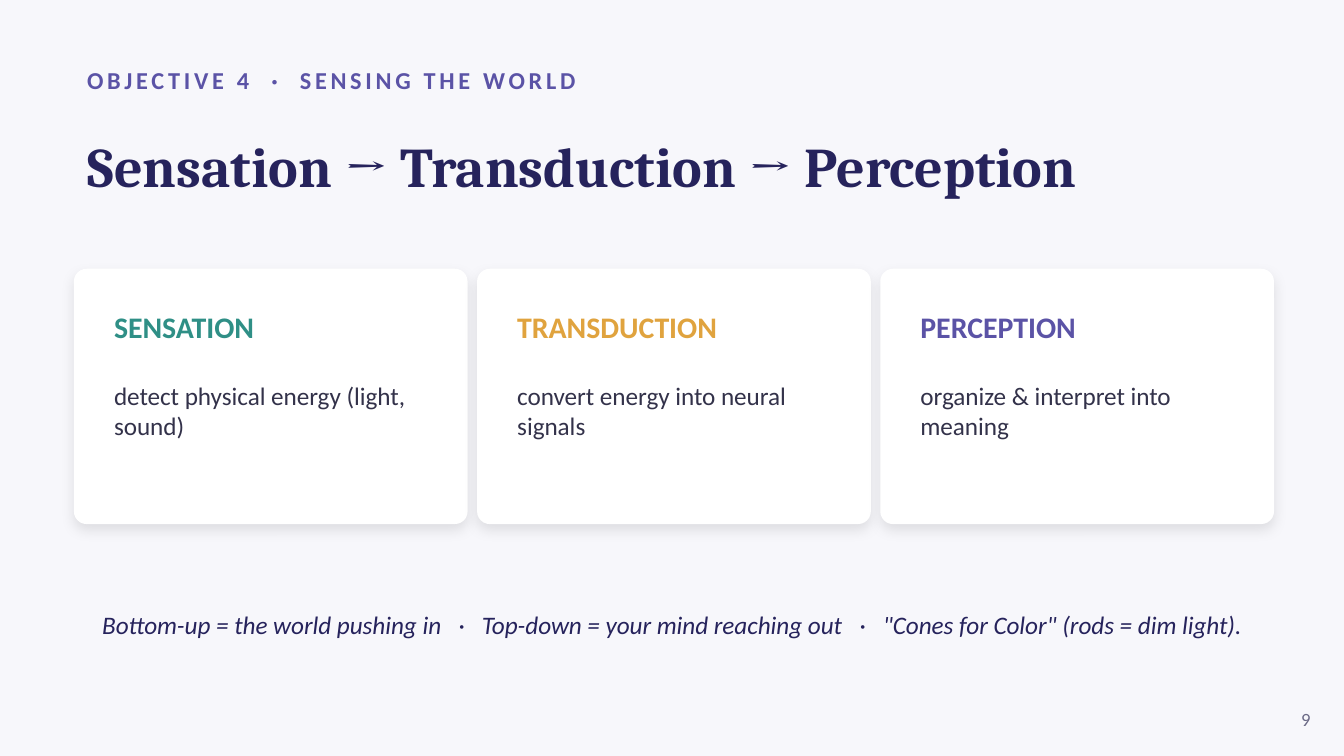
from lxml import etree
from pptx import Presentation
from pptx.dml.color import RGBColor
from pptx.enum import shapes, text
from pptx.oxml.ns import qn
from pptx.util import Inches, Pt

BACKGROUND = RGBColor(0xF7, 0xF7, 0xFB)
WHITE = RGBColor(0xFF, 0xFF, 0xFF)
NAVY = RGBColor(0x26, 0x23, 0x5C)
PURPLE = RGBColor(0x5B, 0x53, 0xA6)
TEAL = RGBColor(0x2F, 0x8F, 0x86)
AMBER = RGBColor(0xE0, 0xA3, 0x3E)
INK = RGBColor(0x33, 0x32, 0x4A)
GREY = RGBColor(0x6B, 0x6A, 0x86)
LEFT, MIDDLE = text.PP_ALIGN.LEFT, text.MSO_ANCHOR.MIDDLE


def place(shape, left, top, width, height, anchor=MIDDLE):
    """Position a text shape and return its text frame."""
    shape.left, shape.top = Inches(left), Inches(top)
    shape.width, shape.height = Inches(width), Inches(height)
    frame = shape.text_frame
    frame.word_wrap = True
    frame.auto_size = text.MSO_AUTO_SIZE.NONE
    frame.vertical_anchor = anchor
    return frame


def write(paragraph, words, color, align=LEFT, tracking=0, dot_tracking=0, **style):
    """Write words, with extra room around each separating dot."""
    paragraph.alignment = align
    for index, part in enumerate(words.split(" ·")):
        pieces = [(part, tracking)]
        if index:
            pieces.insert(0, (" ·", dot_tracking))
        for piece, spacing in pieces:
            run = paragraph.add_run()
            run.text = piece
            for name, value in ({"name": "Calibri"} | style).items():
                setattr(run.font, name, value)
            run.font.color.rgb = color
            if spacing:
                run.font._element.set("spc", str(int(spacing * 100)))


# Widescreen 16:9 slide
prs = Presentation()
prs.slide_width = Inches(10)
prs.slide_height = Inches(10) * 9 // 16
slide = prs.slides.add_slide(prs.slide_layouts[5])
slide.background.fill.solid()
slide.background.fill.fore_color.rgb = BACKGROUND

# Objective line and title
objective = place(slide.shapes.add_textbox(0, 0, 0, 0), 0.55, 0.42, 9, 0.35)
write(objective.paragraphs[0], "OBJECTIVE 4 · SENSING THE WORLD", PURPLE,
      tracking=2, dot_tracking=6.9, size=Pt(13), bold=True)
title = place(slide.shapes.title, 0.55, 0.78, 8.9, 0.9)
write(title.paragraphs[0], "Sensation → Transduction → Perception", NAVY,
      name="Cambria", size=Pt(30), bold=True)

# Three stages, each a card with its text
stages = [
    ("SENSATION", "detect physical energy (light, sound)", TEAL),
    ("TRANSDUCTION", "convert energy into neural signals", AMBER),
    ("PERCEPTION", "organize & interpret into meaning", PURPLE),
]
PITCH = 3
for column, (stage, meaning, accent) in enumerate(stages):
    left = 0.55 + column * PITCH
    card = slide.shapes.add_shape(shapes.MSO_SHAPE.ROUNDED_RECTANGLE,
                                  Inches(left), Inches(2), Inches(2.93), Inches(1.9))
    card.adjustments[0] = 0.05
    card.fill.solid()
    card.fill.fore_color.rgb = WHITE
    card.line.fill.background()

    # Soft shadow below the card
    card.shadow.inherit = False
    effects = card._element.spPr.find(qn("a:effectLst"))
    shadow = etree.SubElement(effects, qn("a:outerShdw"), blurRad=str(Pt(7)),
                              dist=str(Pt(3)), dir="5400000", rotWithShape="0")
    black = etree.SubElement(shadow, qn("a:srgbClr"), val="000000")
    etree.SubElement(black, qn("a:alpha"), val="10000")

    caption = place(slide.shapes.add_textbox(0, 0, 0, 0), left + 0.2, 2.25, 2.55, 1.5,
                    text.MSO_ANCHOR.TOP)
    heading = caption.paragraphs[0]
    heading.space_after = Pt(19)
    write(heading, stage, accent, size=Pt(16), bold=True)
    write(caption.add_paragraph(), meaning, INK, size=Pt(13.5))

# Memory hook and page number
hook = place(slide.shapes.add_textbox(0, 0, 0, 0), 0.55, 4.4, 8.9, 0.5)
write(hook.paragraphs[0],
      'Bottom-up = the world pushing in · Top-down = your mind reaching out'
      ' · "Cones for Color" (rods = dim light).',
      NAVY, text.PP_ALIGN.CENTER, dot_tracking=6.1, size=Pt(13.5), italic=True)
page = place(slide.shapes.add_textbox(0, 0, 0, 0), 9.35, 5.2, 0.5, 0.3)
write(page.paragraphs[0], "9", GREY, text.PP_ALIGN.RIGHT, size=Pt(10))

prs.save("out.pptx")
